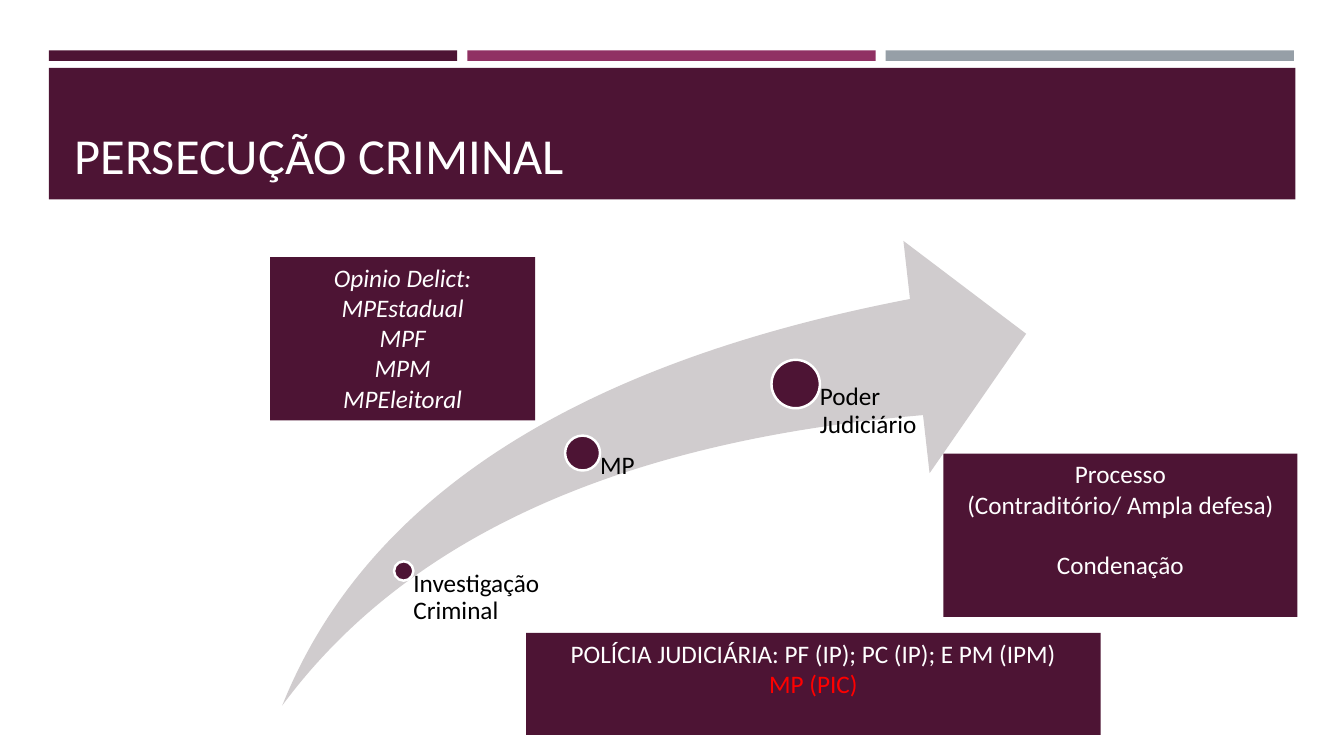
from dataclasses import dataclass

from pptx import Presentation
from pptx.dml.color import RGBColor
from pptx.enum.shapes import MSO_SHAPE
from pptx.enum.text import MSO_ANCHOR, MSO_AUTO_SIZE, PP_ALIGN
from pptx.shapes.autoshape import Shape
from pptx.slide import Slide
from pptx.text.text import _Paragraph
from pptx.util import Emu, Inches, Pt

RECTANGLE, OVAL, SWOOSH = MSO_SHAPE.RECTANGLE, MSO_SHAPE.OVAL, MSO_SHAPE.SWOOSH_ARROW
LEFT, CENTER = PP_ALIGN.LEFT, PP_ALIGN.CENTER
TOP, BOTTOM = MSO_ANCHOR.TOP, MSO_ANCHOR.BOTTOM
NO_AUTOSIZE = MSO_AUTO_SIZE.NONE

SLIDE_WIDTH, SLIDE_HEIGHT = Inches(13.33), Inches(7.5)
PLUM, MAGENTA, SLATE = "4D1434", "903163", "969FA7"
PALE, WHITE, BLACK, RED = "D0CCCE", "FFFFFF", "000000", "FF0000"
FONT = "Calibri"
BODY_SIZE = 18
BLANK_LINE = 1.2 * BODY_SIZE

MARGIN = 3.64
BAR_WIDTH, BAR_STEP = 30.38, 31.13
ARROW_BOTTOM = 93.33
LABEL_WIDTH = 13.2


@dataclass(frozen=True)
class Area:
    """Left and width in percent of slide width, top and height of slide height."""
    left: float
    top: float
    width: float
    height: float


@dataclass(frozen=True)
class Line:
    text: str
    color: str = WHITE
    italic: bool = False
    space_before: float = 0


@dataclass(frozen=True)
class Note:
    area: Area
    lines: tuple[Line, ...]


@dataclass(frozen=True)
class Stage:
    """A dot on the arrow; its label starts at the dot's centre."""
    name: str
    center_x: float
    center_y: float
    diameter: float


NOTES = (
    Note(Area(20.1, 34, 19.73, 21.6), tuple(
        Line(text, italic=True)
        for text in ("Opinio Delict:", "MPEstadual", "MPF", "MPM", "MPEleitoral"))),
    Note(Area(39.15, 83.73, 42.75, 13.47), (
        Line("POLÍCIA JUDICIÁRIA: PF (IP); PC (IP); E PM (IPM)"),
        Line("MP (PIC)", RED))),
    Note(Area(70.2, 60, 26.33, 21.6), (
        Line("Processo"),
        Line("(Contraditório/ Ampla defesa)"),
        Line("Condenação", space_before=BLANK_LINE))),
)
STAGES = (
    Stage("Investigação Criminal", 30.04, 75.53, 1.44),
    Stage("MP", 43.35, 59.93, 2.6),
    Stage("Poder Judiciário", 59.2, 50.8, 3.6),
)


def rgb(color: str) -> RGBColor:
    return RGBColor.from_string(color)


def across(percent: float) -> Emu:
    return Emu(round(SLIDE_WIDTH * percent / 100))


def down(percent: float) -> Emu:
    return Emu(round(SLIDE_HEIGHT * percent / 100))


def bounds(area: Area) -> tuple[Emu, Emu, Emu, Emu]:
    return across(area.left), down(area.top), across(area.width), down(area.height)


def add_filled(slide: Slide, kind: MSO_SHAPE, area: Area, color: str) -> Shape:
    shape = slide.shapes.add_shape(kind, *bounds(area))
    shape.shadow.inherit = False
    shape.fill.solid()
    shape.fill.fore_color.rgb = rgb(color)
    shape.line.fill.background()
    return shape


def format_text(paragraph: _Paragraph, size: float, color: str, align: PP_ALIGN) -> None:
    paragraph.alignment = align
    paragraph.font.name = FONT
    paragraph.font.size = Pt(size)
    paragraph.font.color.rgb = rgb(color)


def add_header(slide: Slide, text: str) -> None:
    for column, color in enumerate((PLUM, MAGENTA, SLATE)):
        bar = Area(MARGIN + column * BAR_STEP, 6.67, BAR_WIDTH, 1.4)
        add_filled(slide, RECTANGLE, bar, color)
    add_filled(slide, RECTANGLE, Area(MARGIN, 8.98, 92.75, 17.4), PLUM)

    title = slide.shapes.title
    title.left, title.top, title.width, title.height = bounds(Area(4.8, 10.27, 90.45, 14.8))
    # Bring the placeholder in front of the band
    slide.shapes._spTree.append(title._element)
    frame = title.text_frame
    frame.text = text
    frame.auto_size = NO_AUTOSIZE
    frame.vertical_anchor = BOTTOM
    format_text(frame.paragraphs[0], 36, WHITE, LEFT)


def add_stage(slide: Slide, stage: Stage) -> None:
    dot_height = stage.diameter * SLIDE_WIDTH / SLIDE_HEIGHT
    dot = add_filled(slide, OVAL, Area(
        stage.center_x - stage.diameter / 2, stage.center_y - dot_height / 2,
        stage.diameter, dot_height), PLUM)
    dot.line.color.rgb = rgb(WHITE)
    dot.line.width = Pt(1.75)

    label = slide.shapes.add_textbox(*bounds(Area(
        stage.center_x, stage.center_y, LABEL_WIDTH, ARROW_BOTTOM - stage.center_y)))
    frame = label.text_frame
    frame.word_wrap = True
    frame.margin_left = across(stage.diameter / 2)
    frame.margin_top = frame.margin_right = frame.margin_bottom = 0
    frame.text = stage.name
    paragraph = frame.paragraphs[0]
    paragraph.line_spacing = 0.9
    format_text(paragraph, BODY_SIZE, BLACK, LEFT)


def add_note(slide: Slide, note: Note) -> None:
    frame = add_filled(slide, RECTANGLE, note.area, PLUM).text_frame
    frame.word_wrap = True
    frame.vertical_anchor = TOP
    frame.text = "\n".join(line.text for line in note.lines)
    for paragraph, line in zip(frame.paragraphs, note.lines):
        format_text(paragraph, BODY_SIZE, line.color, CENTER)
        paragraph.font.italic = line.italic
        paragraph.space_before = Pt(line.space_before)


def main() -> None:
    presentation = Presentation()
    presentation.slide_width, presentation.slide_height = SLIDE_WIDTH, SLIDE_HEIGHT
    title_only = presentation.slide_layouts.get_by_name("Title Only")
    slide = presentation.slides.add_slide(title_only)

    add_header(slide, "PERSECUÇÃO CRIMINAL")
    arrow_area = Area(21, 31.87, 55.35, ARROW_BOTTOM - 31.87)
    arrow = add_filled(slide, SWOOSH, arrow_area, PALE)
    arrow.adjustments[0] = arrow.adjustments[1] = 0.25
    for stage in STAGES:
        add_stage(slide, stage)
    for note in NOTES:
        add_note(slide, note)

    presentation.save("out.pptx")


if __name__ == "__main__":
    main()
